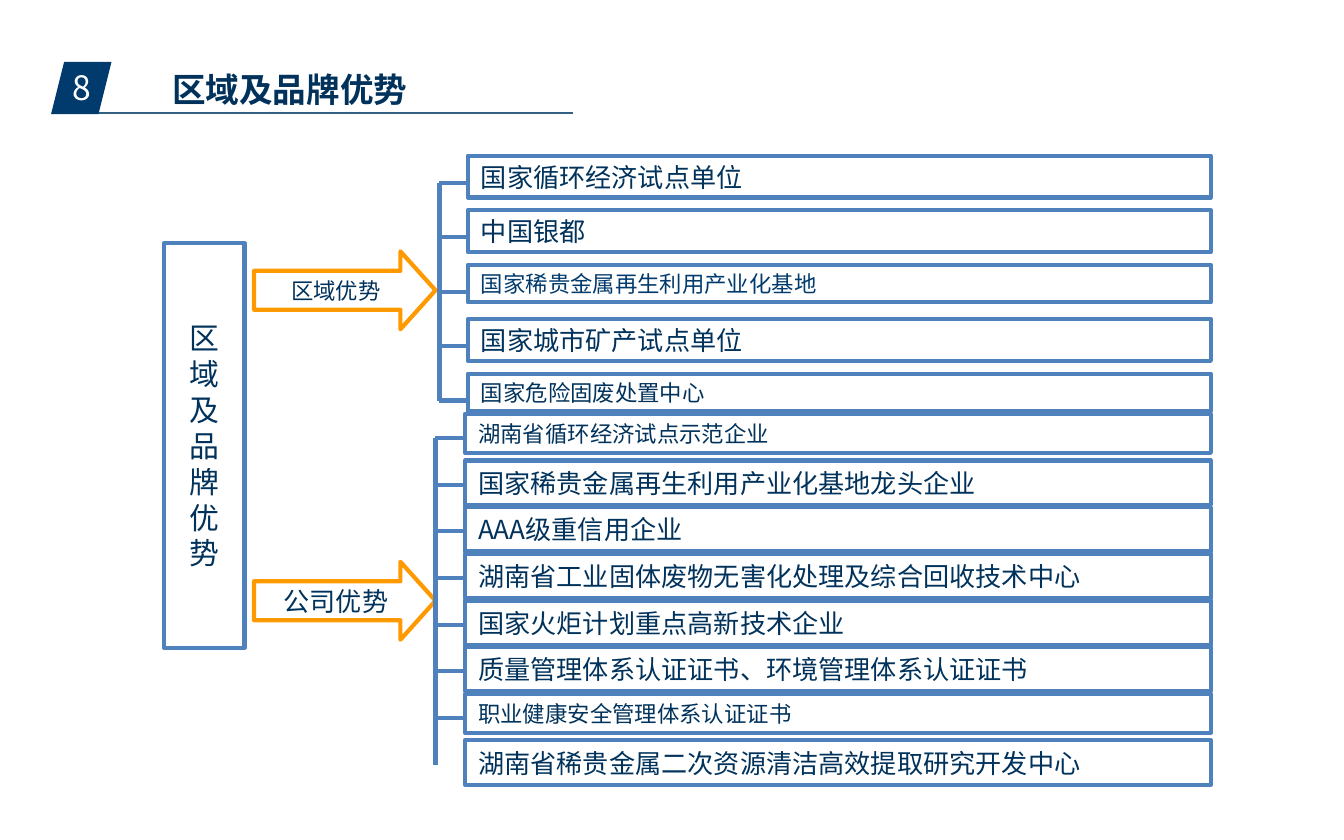
from pptx import Presentation
from pptx.dml.color import RGBColor
from pptx.enum import shapes as es, text as et
from pptx.oxml.ns import qn
from pptx.util import Inches, Pt
from lxml import etree

FONT = "Noto Sans CJK SC"
NAVY = RGBColor(0x01, 0x32, 0x5B)
DEEP = RGBColor(0x01, 0x3B, 0x6D)
BLUE = RGBColor(0x4F, 0x81, 0xBD)
RULE = RGBColor(0x34, 0x61, 0x82)
GOLD = RGBColor(0xFF, 0x99, 0x00)
WHITE = RGBColor(0xFF, 0xFF, 0xFF)
KIND = es.MSO_SHAPE
MID = et.MSO_ANCHOR.MIDDLE
MARGIN = 0.1

# Content
TITLE = "区域及品牌优势"
NUMBER = "8"
GROUPS = [
    dict(name="区域优势", size=12, arrow=1.87, spine=3.27, left=3.48, top=1.16,
         step=0.405, drop=0.2, stubs=5, tall={14: 0.31, 12: 0.28},
         rows=[("国家循环经济试点单位", 14),
               ("中国银都", 14),
               ("国家稀贵金属再生利用产业化基地", 12),
               ("国家城市矿产试点单位", 14),
               ("国家危险固废处置中心", 12)]),
    dict(name="公司优势", size=14, arrow=4.18, spine=3.24, left=3.46, top=3.08,
         step=0.347, drop=0.18, stubs=7, tall={14: 0.33, 12: 0.29},
         rows=[("湖南省循环经济试点示范企业", 12),
               ("国家稀贵金属再生利用产业化基地龙头企业", 14),
               ("AAA级重信用企业", 14),
               ("湖南省工业固体废物无害化处理及综合回收技术中心", 14),
               ("国家火炬计划重点高新技术企业", 14),
               ("质量管理体系认证证书、环境管理体系认证证书", 14),
               ("职业健康安全管理体系认证证书", 12),
               ("湖南省稀贵金属二次资源清洁高效提取研究开发中心", 14)]),
]
RIGHT = 9.01

deck = Presentation()
deck.slide_width, deck.slide_height = Inches(10), Inches(6.25)
slide = deck.slides.add_slide(deck.slide_layouts[5])


def write(shape, words, size=14, color=NAVY, bold=False, wrap=False,
          align=et.PP_ALIGN.CENTER, anchor=MID, pad=0.02):
    frame = shape.text_frame
    frame.word_wrap = wrap
    frame.auto_size = et.MSO_AUTO_SIZE.NONE
    frame.vertical_anchor = anchor
    frame.margin_left = frame.margin_right = Inches(MARGIN)
    frame.margin_top = frame.margin_bottom = Inches(pad)
    frame.text = words
    for para in frame.paragraphs:
        para.alignment = align
        for run in para.runs:
            font = run.font
            font.name, font.size, font.bold = FONT, Pt(size), bold
            font.color.rgb = color
            face = etree.SubElement(run._r.get_or_add_rPr(), qn("a:ea"))
            face.set("typeface", FONT)


def shape(kind, left, top, width, height, line=None, fill=None):
    item = slide.shapes.add_shape(
        kind, Inches(left), Inches(top), Inches(width), Inches(height))
    item.shadow.inherit = False
    if fill is None:
        item.fill.background()
    else:
        item.fill.solid()
        item.fill.fore_color.rgb = fill
    if line is None:
        item.line.fill.background()
    else:
        item.line.color.rgb = line
        item.line.width = Pt(2.25)
    return item


def line(x1, y1, x2, y2, color=BLUE, width=2.25):
    item = slide.shapes.add_connector(
        es.MSO_CONNECTOR.STRAIGHT, Inches(x1), Inches(y1), Inches(x2), Inches(y2))
    item.line.color.rgb = color
    item.line.width = Pt(width)
    etree.SubElement(item._element.spPr, qn("a:effectLst"))


# Heading
line(0.71, 0.84, 4.26, 0.84, color=RULE, width=0.75)
shape(KIND.PARALLELOGRAM, 0.38, 0.46, 0.45, 0.39, fill=DEEP)
badge = slide.shapes.add_textbox(Inches(0.43), Inches(0.45), Inches(0.35), Inches(0.4))
write(badge, NUMBER, size=18, color=WHITE)
head = slide.shapes.title
head.left, head.top, head.width, head.height = map(Inches, (1.18, 0.46, 1.97, 0.4))
write(head, TITLE, size=18, bold=True, align=et.PP_ALIGN.LEFT)

# Root box, one character a line
root = shape(KIND.RECTANGLE, 1.22, 1.81, 0.6, 3.01, line=BLUE)
write(root, "\n".join(TITLE), size=16)

# Branches: arrow, spine, rows and stubs
for group in GROUPS:
    arrow = shape(KIND.RIGHT_ARROW, 1.89, group["arrow"], 1.35, 0.58, line=GOLD)
    arrow.adjustments[0], arrow.adjustments[1] = 0.5, 0.45
    write(arrow, group["name"], size=group["size"])

    spine, left, step = group["spine"], group["left"], group["step"]
    first = group["top"] + group["drop"]
    line(spine, first, spine, first + step * (len(group["rows"]) - 1))
    for i, (words, size) in enumerate(group["rows"]):
        row = shape(KIND.RECTANGLE, left, group["top"] + i * step,
                    RIGHT - left, group["tall"][size], line=BLUE)
        color = DEEP if words.endswith("产业化基地") else NAVY
        write(row, words, size=size, color=color, wrap=True, align=et.PP_ALIGN.LEFT)
        if i < group["stubs"]:
            line(spine, first + i * step, left, first + i * step)

deck.save("out.pptx")
